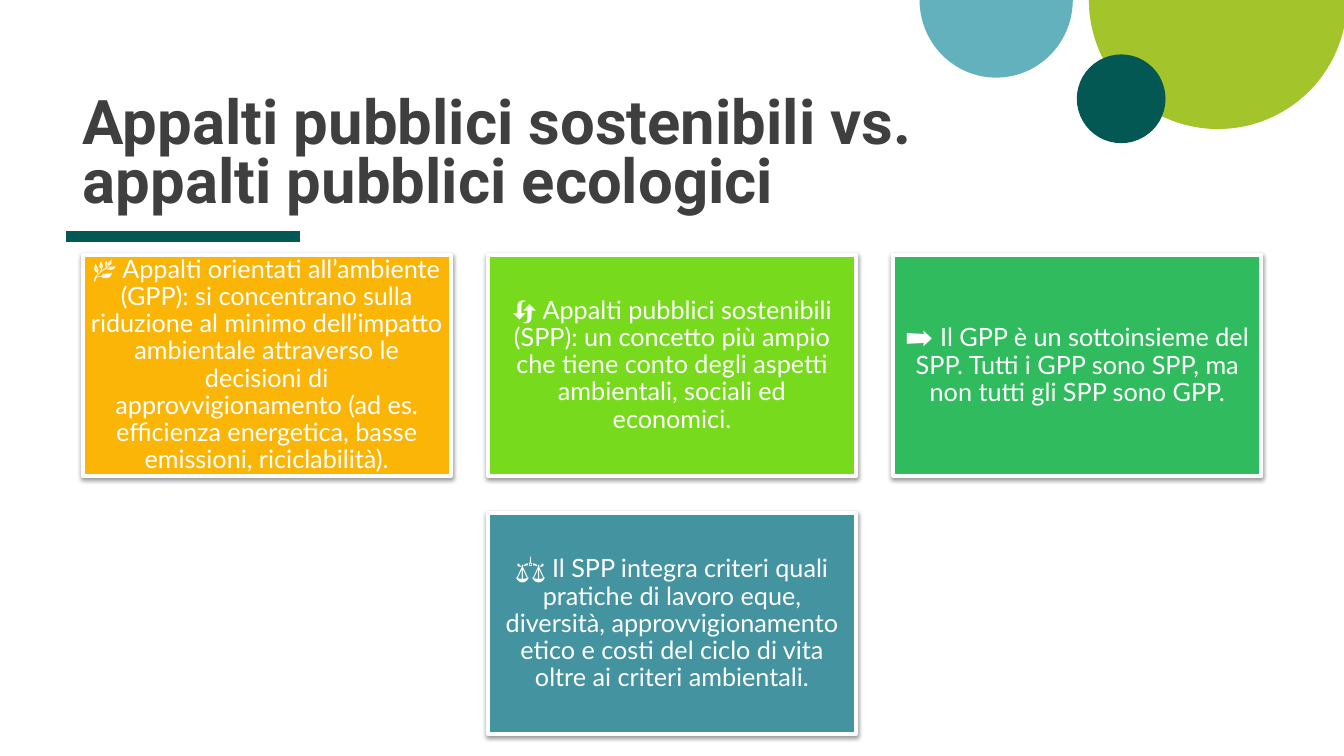
from dataclasses import dataclass

from lxml import etree
from pptx import Presentation
from pptx.dml.color import RGBColor
from pptx.enum.shapes import MSO_CONNECTOR, MSO_SHAPE
from pptx.enum.text import MSO_ANCHOR, PP_ALIGN
from pptx.oxml.ns import qn
from pptx.shapes.autoshape import Shape
from pptx.slide import Slide
from pptx.util import Inches, Pt

PIE, OVAL, RECTANGLE = MSO_SHAPE.PIE, MSO_SHAPE.OVAL, MSO_SHAPE.RECTANGLE
STRAIGHT = MSO_CONNECTOR.STRAIGHT
MIDDLE = MSO_ANCHOR.MIDDLE
CENTER = PP_ALIGN.CENTER

COLORS = {
    "title": "3F3F3F", "white": "FFFFFF", "shadow": "000000",
    "dark teal": "035854", "lime": "A3C42A", "sky": "64B1BE",
    "amber": "FAB506", "green": "77DA1C", "emerald": "30BC5E", "teal": "4393A0",
}

CARD_WIDTH, CARD_HEIGHT, CARD_GAP = 3.65, 2.19, 0.37
CARDS_LEFT, CARDS_TOP, CARDS_PER_ROW = 0.82, 2.53, 3
CARD_INSET = 0.08


@dataclass
class Circle:
    left: float
    top: float
    width: float
    height: float
    color: str
    half: bool


@dataclass
class Card:
    icon: str
    icon_size: int
    text: str
    color: str


CIRCLES = [
    Circle(10.8, -1.28, 2.56, 2.56, "lime", True),
    Circle(9.12, -0.77, 1.52, 1.54, "sky", True),
    Circle(10.68, 0.54, 0.88, 0.88, "dark teal", False),
]

CARDS = [
    Card("🌿 ", 18, "Appalti orientati all’ambiente (GPP): si concentrano sulla riduzione "
         "al minimo dell’impatto ambientale attraverso le decisioni di approvvigionamento "
         "(ad es. efficienza energetica, basse emissioni, riciclabilità).", "amber"),
    Card("🔄 ", 18, "Appalti pubblici sostenibili (SPP): un concetto più ampio che tiene "
         "conto degli aspetti ambientali, sociali ed economici.", "green"),
    Card("➡️ ", 19, "Il GPP è un sottoinsieme del SPP. Tutti i GPP sono SPP, ma non tutti "
         "gli SPP sono GPP.", "emerald"),
    Card("⚖️ ", 19, "Il SPP integra criteri quali pratiche di lavoro eque, diversità, "
         "approvvigionamento etico e costi del ciclo di vita oltre ai criteri ambientali.",
         "teal"),
]


def rgb(name: str) -> RGBColor:
    return RGBColor.from_string(COLORS[name])


def set_insets(shape: Shape, inset: float) -> None:
    frame = shape.text_frame
    frame.margin_left = frame.margin_right = Inches(inset)
    frame.margin_top = frame.margin_bottom = Inches(inset)
    frame.word_wrap = True
    frame.vertical_anchor = MIDDLE


def add_card_shadow(shape: Shape) -> None:
    shape.shadow.inherit = False
    effects = shape._element.spPr.find(qn("a:effectLst"))
    outer = etree.SubElement(effects, qn("a:outerShdw"), blurRad=str(Pt(3.1)),
                             dist=str(Pt(1.6)), dir="5400000", rotWithShape="0")
    color = etree.SubElement(outer, qn("a:srgbClr"), val=COLORS["shadow"])
    etree.SubElement(color, qn("a:alpha"), val="38000")


def draw_underline(slide: Slide) -> None:
    underline = slide.shapes.add_connector(
        STRAIGHT, Inches(0.65), Inches(2.35), Inches(2.98), Inches(2.35))
    underline.line.color.rgb = rgb("dark teal")
    underline.line.width = Pt(8)
    etree.SubElement(underline._element.spPr, qn("a:effectLst"))


def draw_circle(slide: Slide, circle: Circle) -> None:
    disc = slide.shapes.add_shape(
        PIE if circle.half else OVAL, Inches(circle.left), Inches(circle.top),
        Inches(circle.width), Inches(circle.height))
    if circle.half:
        disc.adjustments[0] = 0
        disc.adjustments[1] = 108  # 180 degrees
    disc.shadow.inherit = False
    disc.fill.solid()
    disc.fill.fore_color.rgb = rgb(circle.color)
    disc.line.fill.background()


def draw_title(slide: Slide) -> None:
    title = slide.shapes.add_textbox(Inches(0.82), Inches(0.69), Inches(9.28), Inches(1.72))
    set_insets(title, 0)
    paragraph = title.text_frame.paragraphs[0]
    paragraph.text = "Appalti pubblici sostenibili vs. appalti pubblici ecologici"
    paragraph.line_spacing = 0.8
    paragraph.font.name = "Roboto"
    paragraph.font.size = Pt(44)
    paragraph.font.bold = True
    paragraph.font.color.rgb = rgb("title")


def draw_card(slide: Slide, card: Card, left: float, top: float) -> None:
    box = slide.shapes.add_shape(
        RECTANGLE, Inches(left), Inches(top), Inches(CARD_WIDTH), Inches(CARD_HEIGHT))
    add_card_shadow(box)
    box.fill.solid()
    box.fill.fore_color.rgb = rgb(card.color)
    box.line.color.rgb = rgb("white")
    box.line.width = Pt(3)
    set_insets(box, CARD_INSET)
    paragraph = box.text_frame.paragraphs[0]
    paragraph.alignment = CENTER
    paragraph.line_spacing = 0.9
    paragraph.font.name = "Lato"
    paragraph.font.color.rgb = rgb("white")
    for text, size in ((card.icon, card.icon_size), (card.text, 18)):
        run = paragraph.add_run()
        run.text = text
        run.font.size = Pt(size)


def draw_cards(slide: Slide) -> None:
    # Rows of three; a shorter last row is centred
    for start in range(0, len(CARDS), CARDS_PER_ROW):
        row = CARDS[start:start + CARDS_PER_ROW]
        top = CARDS_TOP + start // CARDS_PER_ROW * (CARD_HEIGHT + CARD_GAP)
        offset = (CARDS_PER_ROW - len(row)) / 2
        for column, card in enumerate(row):
            left = CARDS_LEFT + (column + offset) * (CARD_WIDTH + CARD_GAP)
            draw_card(slide, card, left, top)


def main() -> None:
    presentation = Presentation()
    presentation.slide_width = Inches(13.33)
    presentation.slide_height = Inches(7.5)
    slide = presentation.slides.add_slide(presentation.slide_layouts[6])

    # Decoration
    draw_underline(slide)
    for circle in CIRCLES:
        draw_circle(slide, circle)

    # Content
    draw_title(slide)
    draw_cards(slide)
    presentation.save("out.pptx")


if __name__ == "__main__":
    main()
